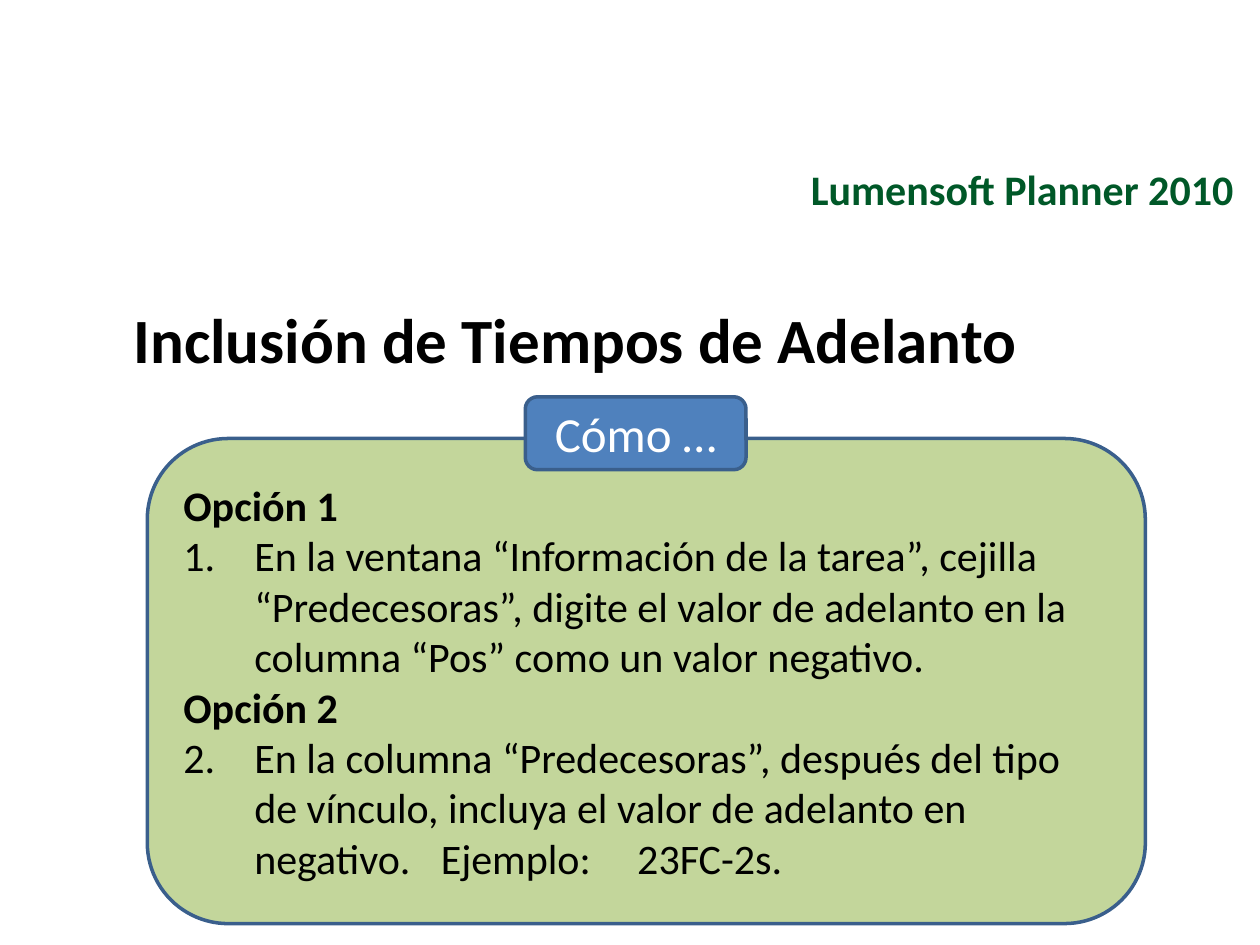
from lxml.etree import SubElement
from pptx import Presentation
from pptx.dml.color import RGBColor
from pptx.enum.shapes import MSO_SHAPE
from pptx.enum.text import MSO_ANCHOR, PP_ALIGN
from pptx.oxml.ns import qn
from pptx.util import Cm, Pt

HEAD = "Lumensoft Planner 2010"
TITLE = "Inclusión de Tiempos de Adelanto"
LABEL = "Cómo …"
STEPS = [
    ("Opción 1",
     "En la ventana “Información de la tarea”, cejilla “Predecesoras”, digite "
     "el valor de adelanto en la columna “Pos” como un valor negativo."),
    ("Opción 2",
     "En la columna “Predecesoras”, después del tipo de vínculo, incluya el "
     "valor de adelanto en negativo.\tEjemplo:\t23FC-2s."),
]
TABS = (5.19, 9.15)
HANG = 1.43

FONT = "Calibri"
BLACK = RGBColor(0x00, 0x00, 0x00)
WHITE = RGBColor(0xFF, 0xFF, 0xFF)
GREEN = RGBColor(0x00, 0x58, 0x28)
LIME = RGBColor(0xC3, 0xD6, 0x9B)
BLUE = RGBColor(0x4F, 0x81, 0xBD)
NAVY = RGBColor(0x3A, 0x5F, 0x8C)


def write(para, text, size, color, bold=False, align=PP_ALIGN.LEFT):
    para.alignment = align
    run = para.add_run()
    run.text = text
    font = run.font
    font.name, font.size, font.bold = FONT, Pt(size), bold
    font.color.rgb = color


def indent(para, left, hang=0):
    props = para._p.get_or_add_pPr()
    props.set("marL", str(Cm(left)))
    props.set("indent", str(-Cm(hang)))
    return props


def number(para, start):
    """Number the paragraph and set its tab stops."""
    props = indent(para, HANG, HANG)
    SubElement(props, qn("a:buFont"), typeface="+mj-lt")
    SubElement(props, qn("a:buAutoNum"), type="arabicPeriod", startAt=str(start))
    stops = SubElement(props, qn("a:tabLst"))
    for stop in TABS:
        SubElement(stops, qn("a:tab"), pos=str(Cm(stop)), algn="l")


def add_box(group, place, fill):
    box = group.shapes.add_shape(MSO_SHAPE.ROUNDED_RECTANGLE, *map(Cm, place))
    box.shadow.inherit = False
    box.fill.solid()
    box.fill.fore_color.rgb = fill
    box.line.color.rgb = NAVY
    box.line.width = Pt(2)
    frame = box.text_frame
    frame.word_wrap = True
    frame.vertical_anchor = MSO_ANCHOR.MIDDLE
    return frame


def main():
    deck = Presentation()
    deck.slide_width, deck.slide_height = Cm(25.4), Cm(19.05)
    slide = deck.slides.add_slide(deck.slide_layouts[5])

    title = slide.shapes.title
    title.left, title.top, title.width, title.height = map(
        Cm, (1.3, 5.94, 23.19, 2.79))
    title.text_frame.vertical_anchor = MSO_ANCHOR.TOP
    para = title.text_frame.paragraphs[0]
    indent(para, 1.14)
    write(para, TITLE, 36, BLACK, True)

    head = slide.shapes.add_textbox(*map(Cm, (13.69, 2.92, 11.43, 1.75)))
    head.text_frame.word_wrap = True
    head.text_frame.vertical_anchor = MSO_ANCHOR.MIDDLE
    write(head.text_frame.paragraphs[0], HEAD, 24, GREEN, True, PP_ALIGN.RIGHT)

    group = slide.shapes.add_group_shape()
    frame = add_box(group, (2.97, 8.84, 20.12, 9.78), LIME)
    para = frame.paragraphs[0]
    for count, (name, step) in enumerate(STEPS, 1):
        if count > 1:
            para = frame.add_paragraph()
        write(para, name, 24, BLACK, True)
        para = frame.add_paragraph()
        number(para, count)
        write(para, step, 24, BLACK)

    frame = add_box(group, (10.59, 8, 4.45, 1.47), BLUE)
    write(frame.paragraphs[0], LABEL, 28, WHITE, align=PP_ALIGN.CENTER)

    deck.save("out.pptx")


if __name__ == "__main__":
    main()
